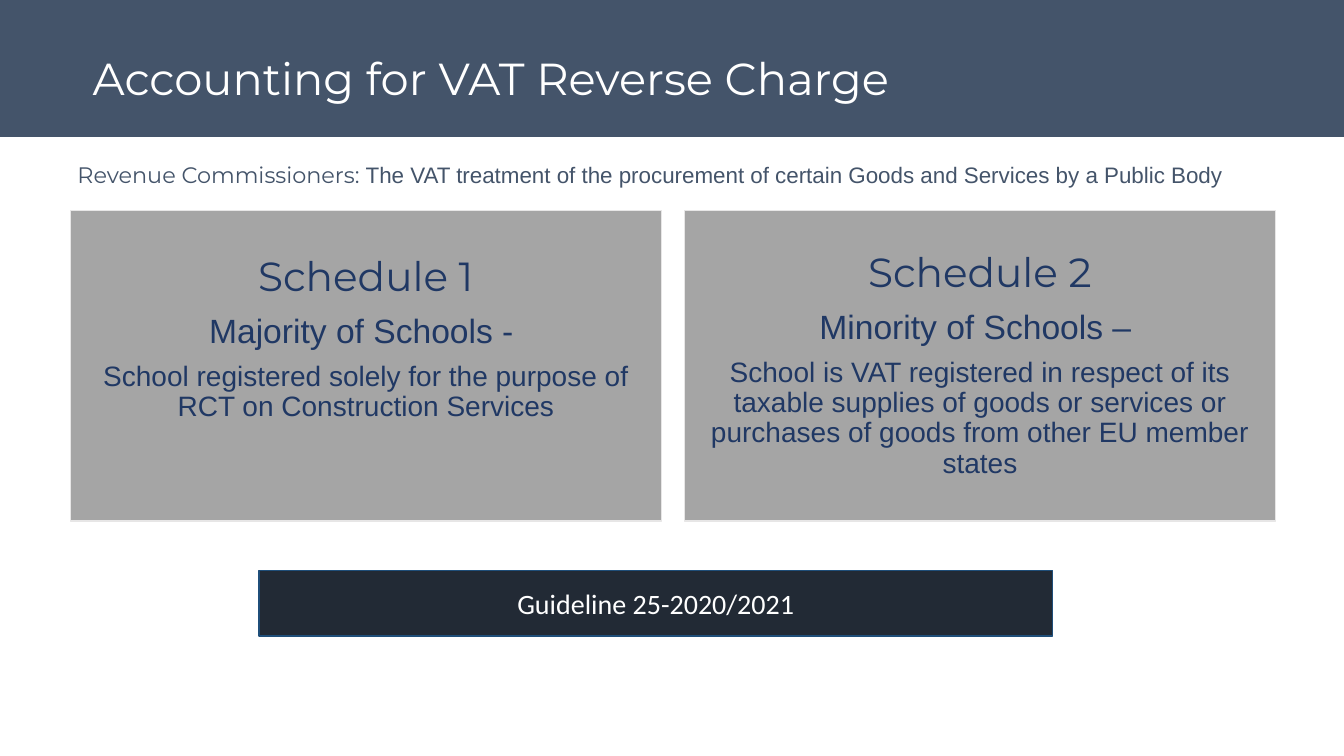
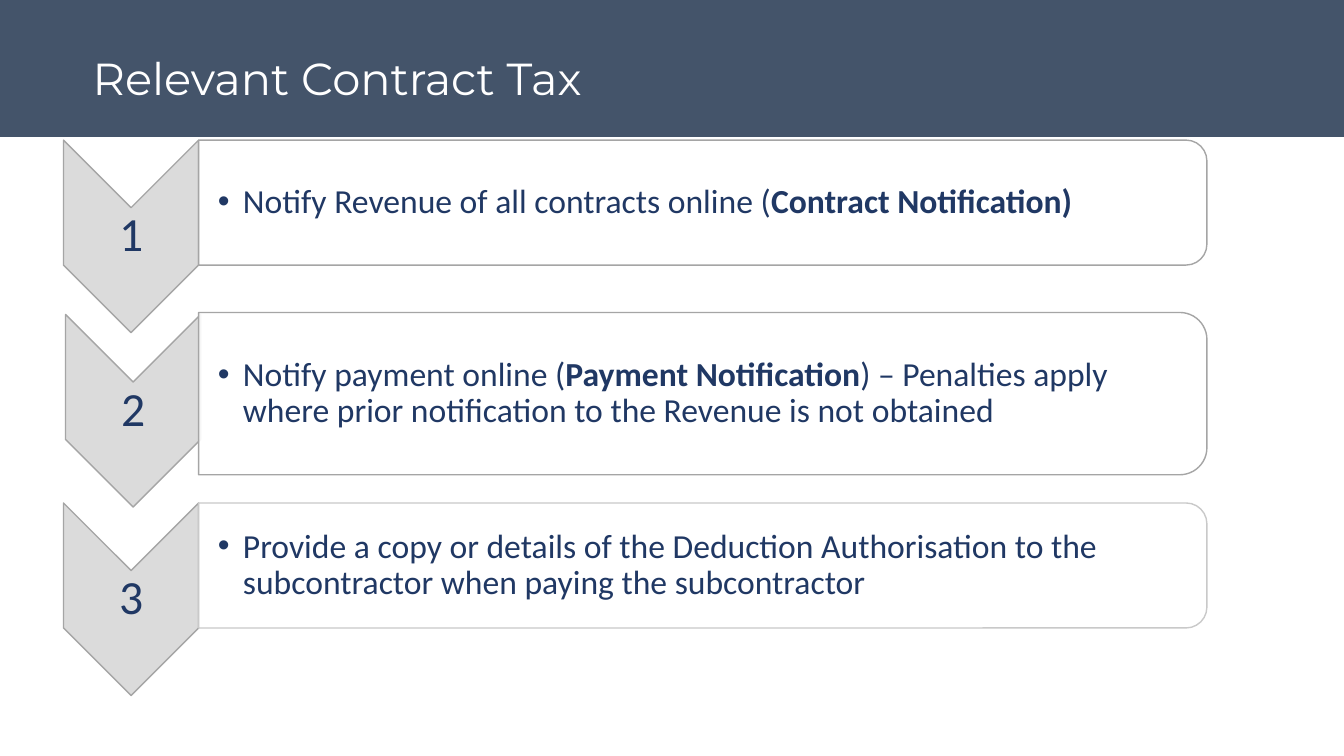
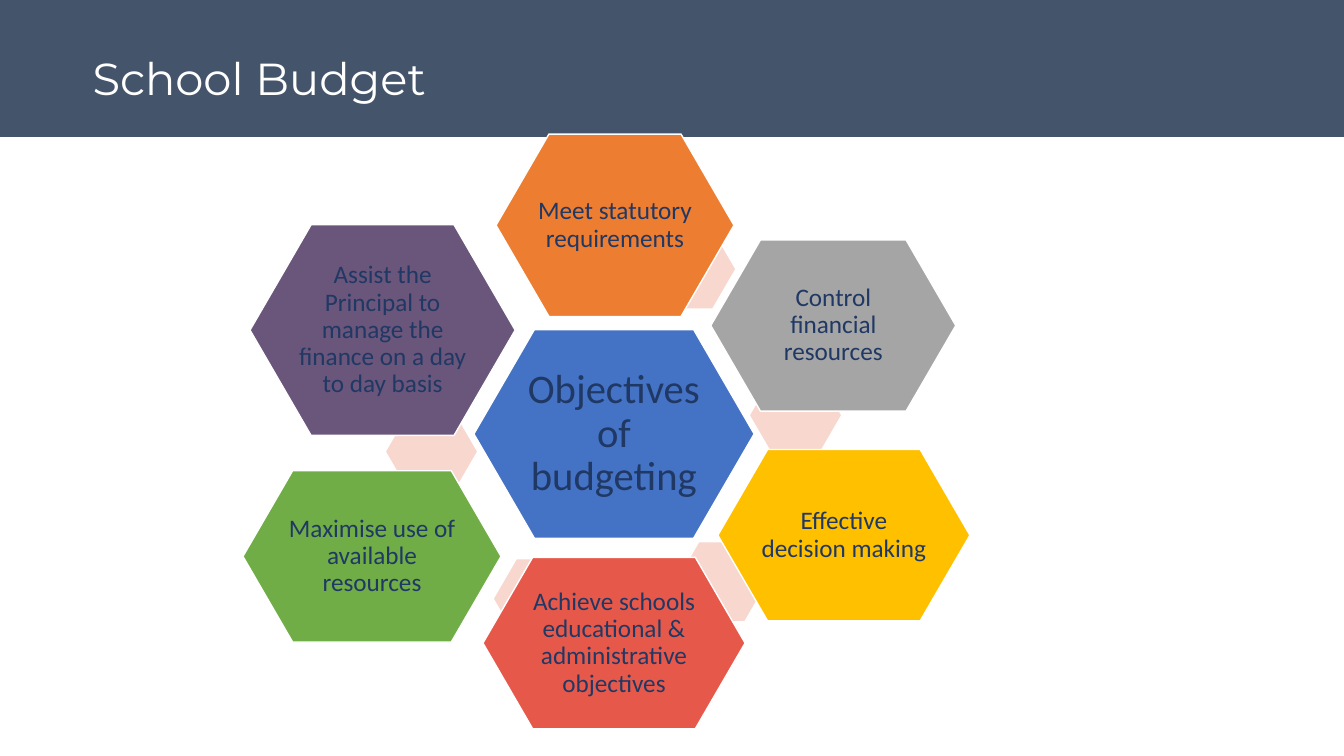
from lxml import etree
from pptx import Presentation
from pptx import util as u
from pptx.dml.color import RGBColor
from pptx.enum import shapes, text
from pptx.oxml.ns import qn

SLATE = RGBColor(0x44, 0x54, 0x6A)
NAVY = RGBColor(0x20, 0x38, 0x64)
INK = RGBColor(0x22, 0x2A, 0x35)
BLUE_EDGE = RGBColor(0x1F, 0x4E, 0x79)
WHITE = RGBColor(0xFF, 0xFF, 0xFF)
GREY = RGBColor(0xA5, 0xA5, 0xA5)
PALE_GREY = RGBColor(0xDB, 0xDB, 0xDB)
SOFT_EDGE = RGBColor(0xC9, 0xC9, 0xC9)
LIGHT_EDGE = RGBColor(0xE7, 0xE6, 0xE6)
BLUE = RGBColor(0x44, 0x72, 0xC4)
ORANGE = RGBColor(0xED, 0x7D, 0x31)
GOLD = RGBColor(0xFF, 0xC0, 0x00)
RED = RGBColor(0xE6, 0x59, 0x4A)
GREEN = RGBColor(0x70, 0xAD, 0x47)
PURPLE = RGBColor(0x6A, 0x55, 0x7B)
PEACH = RGBColor(0xF8, 0xD7, 0xCE)

HEADING, BODY, PLAIN = "Montserrat", "Calibri", "Arial"
KIND = shapes.MSO_SHAPE
MIDDLE = text.MSO_ANCHOR.MIDDLE
CENTER = text.PP_ALIGN.CENTER


def add_panel(page, kind, box, fill, edge=None, turned=False):
    """Draw a filled shape that covers the box, optionally turned by 90 degrees."""
    left, top, width, height = box
    if turned:
        left, top = left + (width - height) / 2, top + (height - width) / 2
        width, height = height, width
    panel = page.shapes.add_shape(kind, *map(u.Inches, (left, top, width, height)))
    panel.rotation = 90 if turned else 0
    panel.shadow.inherit = False
    panel.fill.solid()
    panel.fill.fore_color.rgb = fill
    if edge is None:
        panel.line.fill.background()
    else:
        panel.line.color.rgb = edge
        panel.line.width = u.Pt(1)
    return panel


def add_label(page, box, margin=None, anchor=MIDDLE):
    """Add a wrapping text box and return its text frame."""
    frame = page.shapes.add_textbox(*map(u.Inches, box)).text_frame
    set_frame(frame, margin, anchor)
    return frame


def set_frame(frame, margin=None, anchor=MIDDLE):
    """Set wrapping, anchor and equal margins of a text frame."""
    frame.word_wrap = True
    frame.vertical_anchor = anchor
    if margin is not None:
        frame.margin_left = frame.margin_right = u.Inches(margin)
        frame.margin_top = frame.margin_bottom = u.Inches(margin)


def write(para, words, size, font, color, align=None, bold=False):
    """Append one formatted run to a paragraph."""
    span = para.add_run()
    span.text = words
    span.font.size = u.Pt(size)
    span.font.name = font
    span.font.color.rgb = color
    span.font.bold = bold
    if align is not None:
        para.alignment = align


def add_page(deck, title):
    """Add a slide with the title band."""
    page = deck.slides.add_slide(deck.slide_layouts[6])
    add_panel(page, KIND.RECTANGLE, (0, 0, 13.33, 1.36), SLATE)
    frame = add_label(page, (0.82, 0.45, 11.71, 0.64), anchor=text.MSO_ANCHOR.TOP)
    write(frame.paragraphs[0], title, 32, HEADING, WHITE)
    return page


def add_schedule(page, box, lines, bottom):
    """Draw a schedule card with a heading, a group and a description."""
    card = add_panel(page, KIND.RECTANGLE, box, GREY, LIGHT_EDGE)
    frame = card.text_frame
    set_frame(frame, 0.12)
    frame.margin_bottom = u.Inches(bottom)
    styles = ((29, HEADING), (24, PLAIN), (20, PLAIN))
    for index, (words, (size, font)) in enumerate(zip(lines, styles)):
        para = frame.add_paragraph() if index else frame.paragraphs[0]
        para.line_spacing = 0.9
        para.space_after = u.Pt(round(size * 0.35))
        write(para, words, size, font, NAVY, CENTER)


def add_step(page, box, number, spans, edge, shift):
    """Draw a numbered chevron and the bulleted card beside it."""
    left, top, width, height = box
    arrow = (left - 1.34 + shift, top + shift, 1.34, 1.91)
    add_panel(page, KIND.CHEVRON, arrow, PALE_GREY, GREY, turned=True)
    para = add_label(page, arrow, 0.02).paragraphs[0]
    para.line_spacing = 0.9
    write(para, number, 34, BODY, NAVY, CENTER)

    card = add_panel(page, KIND.ROUND_2_SAME_RECTANGLE, box, WHITE, edge, turned=True)
    color = card.fill._xPr.find(qn("a:solidFill"))[0]
    etree.SubElement(color, qn("a:alpha"), val="90000")
    frame = add_label(page, (left, top, width - 0.06, height), 0.02)
    frame.margin_left = u.Inches(0.19)
    para = frame.paragraphs[0]
    para.line_spacing = 0.9
    properties = para._p.get_or_add_pPr()
    properties.set("marL", str(u.Inches(0.25)))
    properties.set("indent", str(-u.Inches(0.25)))
    etree.SubElement(properties, qn("a:buFont"), typeface="Arial")
    etree.SubElement(properties, qn("a:buChar"), char="•")
    for words, bold in spans:
        write(para, words, 24, BODY, NAVY, bold=bold)


def add_hexagon(page, box, fill, words=None, size=18):
    """Draw a hexagon, with centred words and a white edge if it has words."""
    hexagon = add_panel(page, KIND.HEXAGON, box, fill, WHITE if words else None)
    hexagon.adjustments[0] = 0.29
    if words:
        left, top, width, height = box
        inner = (left + width * 0.155, top + height * 0.155, width * 0.69, height * 0.69)
        para = add_label(page, inner, 0.03).paragraphs[0]
        para.line_spacing = 0.9
        write(para, words, size, BODY, NAVY, CENTER)


def build_reverse_charge(deck):
    """Build the slide that compares the two schedules."""
    page = add_page(deck, "Accounting for VAT Reverse Charge")
    intro = add_label(page, (0.67, 1.55, 11.99, 0.37), anchor=text.MSO_ANCHOR.TOP).paragraphs[0]
    write(intro, "Revenue Commissioners: ", 16, HEADING, SLATE)
    write(intro, "The VAT treatment of the procurement of certain Goods and Services by a Public Body",
          16, PLAIN, SLATE)
    schedules = (
        (("Schedule 1", "Majority of Schools - ",
          "School registered solely for the purpose of RCT on Construction Services"), 0.64),
        (("Schedule 2", "Minority of Schools – ",
          "School is VAT registered in respect of its taxable supplies of goods or services "
          "or purchases of goods from other EU member states"), 0.12),
    )
    width, gap = 5.86, 0.23
    for index, (lines, bottom) in enumerate(schedules):
        add_schedule(page, (0.7 + index * (width + gap), 2.09, width, 3.08), lines, bottom)
    guideline = add_panel(page, KIND.RECTANGLE, (2.57, 5.66, 7.87, 0.65), INK, BLUE_EDGE)
    set_frame(guideline.text_frame)
    write(guideline.text_frame.paragraphs[0], "Guideline 25-2020/2021", 20, BODY, WHITE, CENTER)


def build_contract_tax(deck):
    """Build the slide with the three numbered steps."""
    page = add_page(deck, "Relevant Contract Tax")
    steps = (
        (1.39, 1.24, GREY, 0, (("Notify Revenue of all contracts online (", False),
                               ("Contract Notification)", True))),
        (3.1, 1.61, GREY, 0.02, (("Notify payment online (", False),
                                 ("Payment Notification", True),
                                 (") – Penalties apply where prior notification to the "
                                  "Revenue is not obtained", False))),
        (4.99, 1.24, SOFT_EDGE, 0, (("Provide a copy or details of the Deduction Authorisation "
                                     "to the subcontractor when paying the subcontractor", False),)),
    )
    for number, (top, height, edge, shift, spans) in enumerate(steps, 1):
        add_step(page, (1.97, top, 10, height), str(number), spans, edge, shift)


def build_budget(deck):
    """Build the slide with the ring of budgeting objectives."""
    page = add_page(deck, "School Budget")
    links = ((6.39, 2.28), (7.44, 3.73), (6.71, 5.38), (4.9, 5.55), (3.83, 4.09))
    for left, top in links:
        add_hexagon(page, (left, top, 0.9, 0.78), PEACH)
    add_hexagon(page, (4.7, 3.27, 2.78, 2.07), BLUE, "Objectives of budgeting", 29)
    objectives = (
        ((4.92, 1.33, 2.36, 1.81), ORANGE, "Meet statutory requirements"),
        ((7.05, 2.38, 2.43, 1.7), GREY, "Control financial resources"),
        ((7.12, 4.46, 2.5, 1.7), GOLD, "Effective decision making"),
        ((4.79, 5.53, 2.6, 1.7), RED, "Achieve schools educational & administrative objectives"),
        ((2.41, 4.67, 2.56, 1.7), GREEN, "Maximise use of available resources"),
        ((2.48, 2.23, 2.63, 2.09), PURPLE,
         "Assist the Principal to manage the finance on a day to day basis"),
    )
    for box, fill, words in objectives:
        add_hexagon(page, box, fill, words)


def main():
    """Build and save the deck."""
    deck = Presentation()
    deck.slide_width, deck.slide_height = u.Inches(13.33), u.Inches(7.5)
    for build in (build_reverse_charge, build_contract_tax, build_budget):
        build(deck)
    deck.save("out.pptx")


if __name__ == "__main__":
    main()
